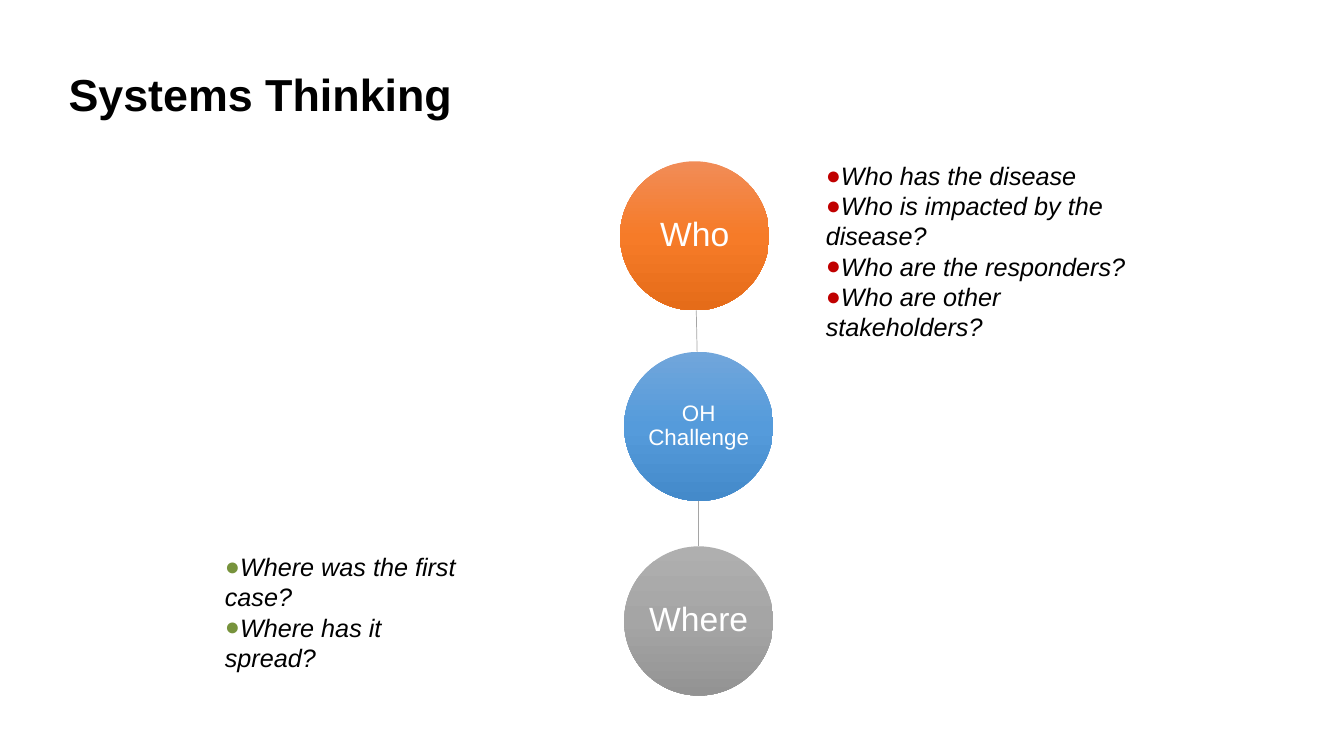
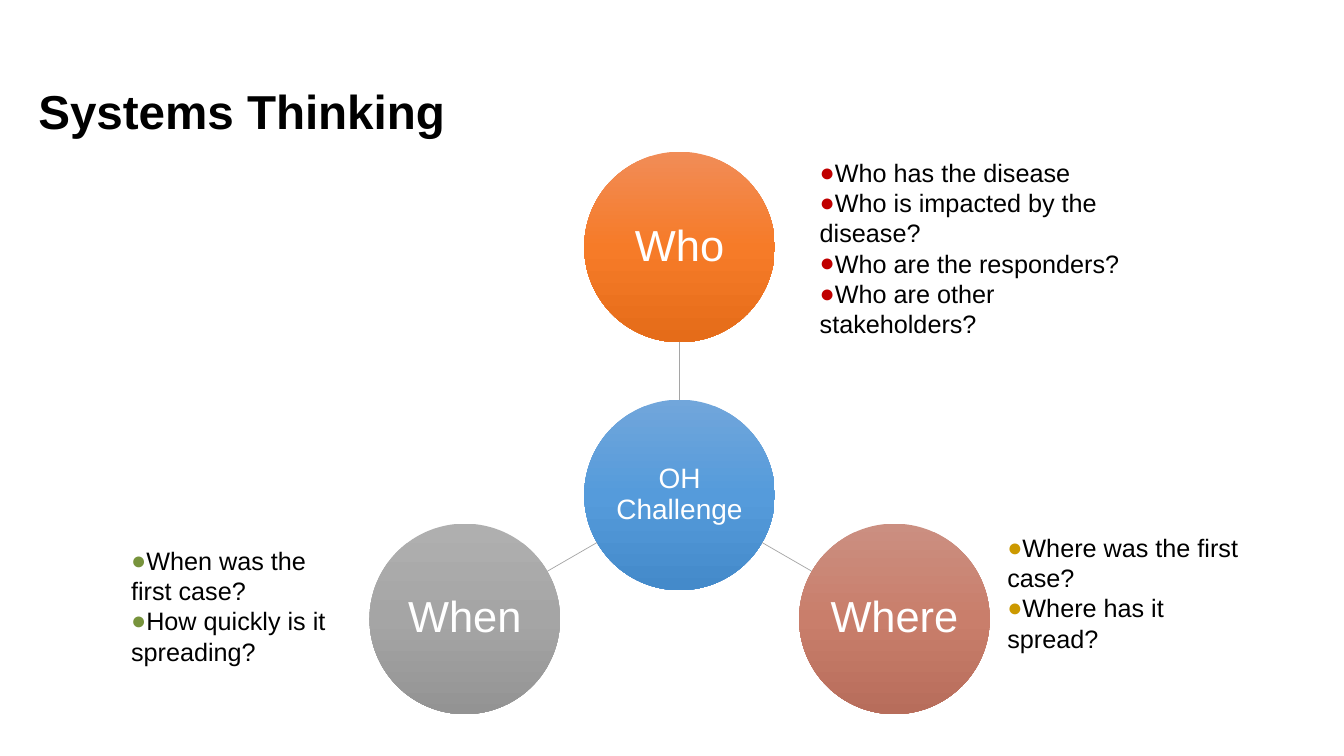
import copy
import math

from lxml import etree
from pptx import Presentation
from pptx import util as u
from pptx.dml.color import RGBColor
from pptx.enum import shapes, text
from pptx.oxml.ns import qn

BLACK = RGBColor(0x00, 0x00, 0x00)
WHITE = RGBColor(0xFF, 0xFF, 0xFF)
LINK_GRAY = RGBColor(0xA5, 0xA5, 0xA5)
RED = RGBColor(0xC0, 0x00, 0x00)
GREEN = RGBColor(0x77, 0x93, 0x3C)
GOLD = RGBColor(0xCC, 0x99, 0x00)

BLUE_SHADES = (RGBColor(0x71, 0xA6, 0xDB), RGBColor(0x55, 0x9B, 0xDB), RGBColor(0x44, 0x8A, 0xCA))
ORANGE_SHADES = (RGBColor(0xF1, 0x8C, 0x57), RGBColor(0xF6, 0x7B, 0x28), RGBColor(0xE5, 0x6C, 0x19))
GRAY_SHADES = (RGBColor(0xAF, 0xAF, 0xAF), RGBColor(0xA5, 0xA5, 0xA5), RGBColor(0x93, 0x93, 0x93))
CLAY_SHADES = (RGBColor(0xCB, 0x8F, 0x81), RGBColor(0xC9, 0x7E, 0x6B), RGBColor(0xB7, 0x6D, 0x5B))

PX = 9144
HEADING = "Systems Thinking"
HUB = "OH Challenge"
WHO = ("Who has the disease", "Who is impacted by the disease?",
       "Who are the responders?", "Who are other stakeholders?")
WHEN = ("When was the first case?", "How quickly is it spreading?")
WHERE = ("Where was the first case?", "Where has it spread?")


def px(length):
    return u.Emu(round(length * PX))


def assign(target, values):
    for name, value in values.items():
        setattr(target, name, value)


class Deck:
    FONT = "Arial"
    COMPARISON_LAYOUT = 4
    FRAME = {"word_wrap": True, "auto_size": text.MSO_AUTO_SIZE.NONE}
    TOP_FRAME = {**FRAME, "vertical_anchor": text.MSO_ANCHOR.TOP}
    CIRCLE_FRAME = {**FRAME, "vertical_anchor": text.MSO_ANCHOR.MIDDLE,
                    "margin_left": px(1), "margin_right": px(1),
                    "margin_top": px(1), "margin_bottom": px(1)}
    LEFT = {"alignment": text.PP_ALIGN.LEFT, "line_spacing": 1.0,
            "space_before": u.Pt(0), "space_after": u.Pt(0)}
    CENTRED = {"alignment": text.PP_ALIGN.CENTER, "line_spacing": 0.9}

    def __init__(self):
        self.prs = Presentation()
        assign(self.prs, {"slide_width": px(1333), "slide_height": px(750)})

    def start(self, title_box, title_size):
        layout = self.prs.slide_layouts[self.COMPARISON_LAYOUT]
        self.slide = self.prs.slides.add_slide(layout)
        self.free = [holder for holder in self.slide.placeholders
                     if holder.placeholder_format.idx > 0]
        title = self.slide.shapes.title
        self.place(title, title_box)
        assign(title.text_frame, self.TOP_FRAME)
        self.fill_in(title.text_frame.paragraphs[0], HEADING, self.LEFT, title_size, BLACK, bold=True)

    def finish(self):
        for holder in self.free:
            holder.element.getparent().remove(holder.element)

    def place(self, shape, box):
        assign(shape, dict(zip(("left", "top", "width", "height"), map(px, box))))

    def fill_in(self, paragraph, words, layout, size, colour, bold=False, italic=False):
        assign(paragraph, layout)
        run = paragraph.add_run()
        run.text = words
        assign(run.font, {"name": self.FONT, "size": u.Pt(size), "bold": bold, "italic": italic})
        run.font.color.rgb = colour

    def questions(self, box, lines, bullet_colour, italic=False):
        holder = self.free.pop(0)
        self.place(holder, box)
        frame = holder.text_frame
        assign(frame, self.TOP_FRAME)
        for number, line in enumerate(lines):
            paragraph = frame.add_paragraph() if number else frame.paragraphs[0]
            self.fill_in(paragraph, line, self.LEFT, 18, BLACK, italic=italic)
            self.bullet(paragraph, bullet_colour)

    def bullet(self, paragraph, colour):
        props = paragraph._p.get_or_add_pPr()
        props.set("marL", "0")
        props.set("indent", "0")
        tint = etree.SubElement(props, qn("a:buClr"))
        etree.SubElement(tint, qn("a:srgbClr"), val=str(colour))
        etree.SubElement(props, qn("a:buFont"), typeface=self.FONT)
        etree.SubElement(props, qn("a:buChar"), char="●")

    def circle(self, centre, radius, label, size, shades):
        x, y = centre
        disc = self.slide.shapes.add_shape(
            shapes.MSO_SHAPE.OVAL, px(x - radius), px(y - radius), px(2 * radius), px(2 * radius))
        disc.shadow.inherit = False
        disc.line.fill.background()
        self.shade(disc, shades)
        assign(disc.text_frame, self.CIRCLE_FRAME)
        self.fill_in(disc.text_frame.paragraphs[0], label, self.CENTRED, size, WHITE)

    def shade(self, disc, shades):
        disc.fill.gradient()
        disc.fill.gradient_angle = 270
        stops = disc.element.spPr.find(qn("a:gradFill")).find(qn("a:gsLst"))
        stops.append(copy.deepcopy(stops[0]))
        for stop, colour, position in zip(disc.fill.gradient_stops, shades, (0, 0.5, 1)):
            stop.color.rgb = colour
            stop.position = position

    def link(self, start, end, radius):
        share = radius / math.dist(start, end)
        dx, dy = ((b - a) * share for a, b in zip(start, end))
        line = self.slide.shapes.add_connector(
            shapes.MSO_CONNECTOR.STRAIGHT, px(start[0] + dx), px(start[1] + dy),
            px(end[0] - dx), px(end[1] - dy))
        line.line.color.rgb = LINK_GRAY
        line.line.width = u.Pt(0.5)
        etree.SubElement(line._element.spPr, qn("a:effectLst"))

    def diagram(self, hub, radius, hub_size, topic_size, topics):
        self.circle(hub, radius, HUB, hub_size, BLUE_SHADES)
        for label, centre, shades in topics:
            self.link(hub, centre, radius)
            self.circle(centre, radius, label, topic_size, shades)


def around(hub, distance, degrees):
    angle = math.radians(degrees)
    return hub[0] + distance * math.cos(angle), hub[1] + distance * math.sin(angle)


def main():
    deck = Deck()

    deck.start((58, 61, 458, 64), 32)
    deck.diagram((693, 423), 74, 16, 24, (
        ("Who", (689, 234), ORANGE_SHADES),
        ("Where", (693, 616), GRAY_SHADES)))
    deck.questions((809, 154, 325, 192), WHO, RED, italic=True)
    deck.questions((213, 542, 267, 192), WHERE, GREEN, italic=True)
    deck.finish()

    deck.start((28, 76, 460, 67), 34)
    hub = (674, 491)
    deck.diagram(hub, 94.5, 20, 31, [
        (label, around(hub, 246, degrees), shades) for label, degrees, shades in (
            ("Who", -90, ORANGE_SHADES), ("Where", 30, CLAY_SHADES), ("When", 150, GRAY_SHADES))])
    deck.questions((803, 151, 333, 192), WHO, RED)
    deck.questions((120, 536, 232, 131), WHEN, GREEN)
    deck.questions((989, 523, 267, 131), WHERE, GOLD)
    deck.finish()

    deck.prs.save("out.pptx")


if __name__ == "__main__":
    main()
